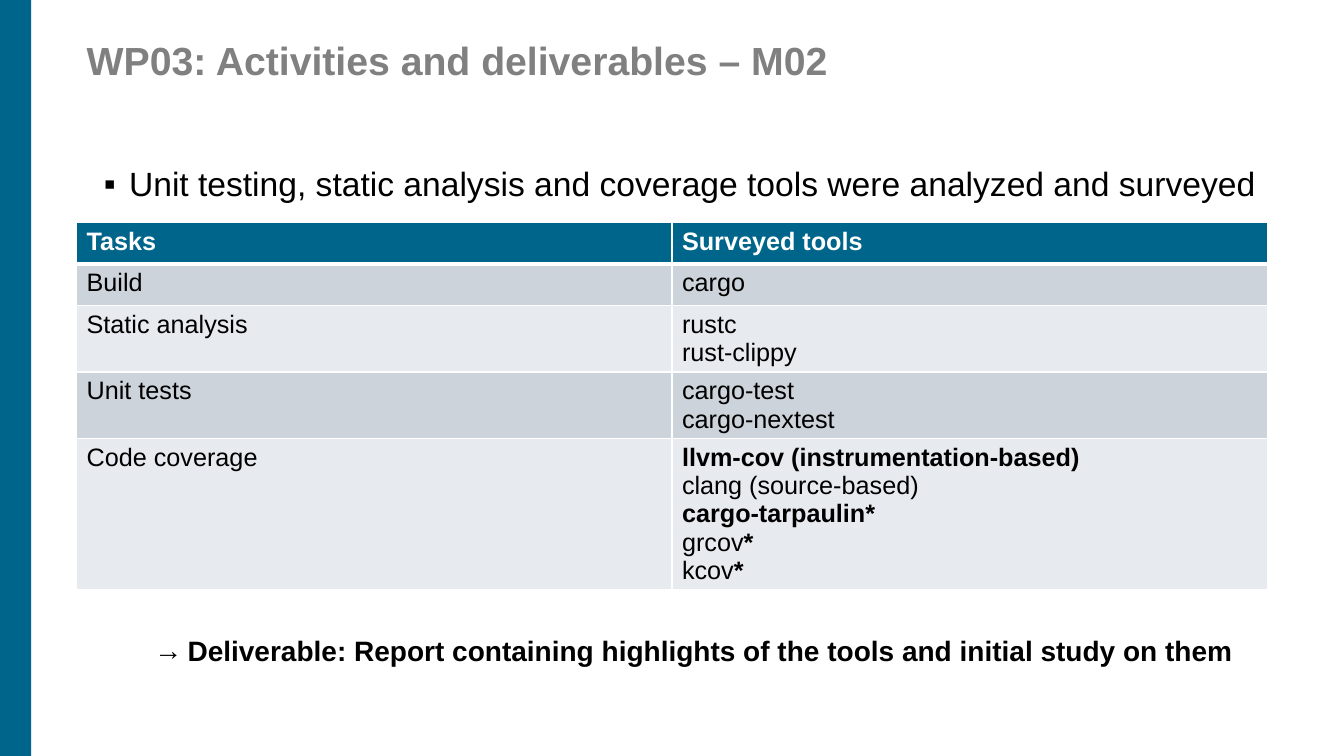
import pptx
import pptx.util
import pptx.dml.color
import pptx.enum.shapes
import pptx.enum.text
import pptx.oxml
import pptx.oxml.ns
from pptx.util import Inches

COLORS = {
    "accent": "00658B",
    "title": "808080",
    "text": "000000",
    "white": "FFFFFF",
    "odd_row": "CCD3DA",
    "even_row": "E7EAEE",
}
FONT = "Arial"
HEADINGS = ("Tasks", "Surveyed tools")
SURVEY = [
    ("Build", [[("cargo", False)]]),
    ("Static analysis", [[("rustc", False)], [("rust-clippy", False)]]),
    ("Unit tests", [[("cargo-test", False)], [("cargo-nextest", False)]]),
    ("Code coverage", [
        [("llvm-cov (instrumentation-based)", True)],
        [("clang (source-based)", False)],
        [("cargo-tarpaulin*", True)],
        [("grcov", False), ("*", True)],
        [("kcov", False), ("*", True)],
    ]),
]


def rgb(name):
    return pptx.dml.color.RGBColor.from_string(COLORS[name])


def xml(markup):
    namespace = pptx.oxml.ns.nsdecls("a")
    return pptx.oxml.parse_xml(markup.replace("/>", f" {namespace}/>", 1)
                               if markup.endswith("/>") and markup.count("<") == 1
                               else markup.replace(">", f" {namespace}>", 1))


def add_run(paragraph, text, size, color, bold=False):
    run = paragraph.add_run()
    run.text = text
    run.font.name = FONT
    run.font.size = pptx.util.Pt(size)
    run.font.bold = bold
    run.font.color.rgb = rgb(color)


def place(shape, left, top, width, height):
    shape.left, shape.top = Inches(left), Inches(top)
    shape.width, shape.height = Inches(width), Inches(height)


def prepare_text(placeholder):
    frame = placeholder.text_frame
    frame.word_wrap = True
    frame.auto_size = pptx.enum.text.MSO_AUTO_SIZE.NONE
    frame.vertical_anchor = pptx.enum.text.MSO_ANCHOR.TOP
    return frame


def add_sidebar(slide, left, top, width, height):
    sidebar = slide.shapes.add_shape(
        pptx.enum.shapes.MSO_SHAPE.RECTANGLE,
        Inches(left), Inches(top), Inches(width), Inches(height))
    sidebar.shadow.inherit = False
    sidebar.fill.solid()
    sidebar.fill.fore_color.rgb = rgb("accent")
    sidebar.line.fill.background()


def fill_title(slide, left, top, width, height):
    title = slide.shapes.title
    place(title, left, top, width, height)
    heading = prepare_text(title).paragraphs[0]
    heading.alignment = pptx.enum.text.PP_ALIGN.LEFT
    heading.line_spacing = 0.9
    add_run(heading, "WP03: Activities and deliverables – M02", 28, "title", True)


def set_bullet(paragraph, symbol, margin, hanging):
    properties = paragraph._p.get_or_add_pPr()
    properties.set("marL", str(Inches(margin)))
    properties.set("indent", str(-Inches(hanging)))
    properties.append(xml(f'<a:buFont typeface="{FONT}"/>'))
    properties.append(xml(f'<a:buChar char="{symbol}"/>'))
    paragraph.line_spacing = 0.9


def fill_body(slide, left, top, width, height):
    body = slide.placeholders[1]
    place(body, left, top, width, height)
    frame = prepare_text(body)

    finding = frame.paragraphs[0]
    set_bullet(finding, "▪", 0.25, 0.25)
    finding.space_before = pptx.util.Pt(0)
    add_run(finding, "Unit testing, static analysis and coverage tools "
            "were analyzed and surveyed", 24, "text")

    deliverable = frame.add_paragraph()
    deliverable.level = 1
    set_bullet(deliverable, "→", 0.83, 0.33)
    deliverable.space_before = Inches(4.3)
    add_run(deliverable, "Deliverable: Report containing highlights of the tools "
            "and initial study on them", 20, "text", True)


def style_cell(cell, fill, bottom_width):
    properties = cell._tc.get_or_add_tcPr()
    for side, width in (("L", 1), ("R", 1), ("T", 1), ("B", bottom_width)):
        properties.append(xml(
            f'<a:ln{side} w="{pptx.util.Pt(width)}"><a:solidFill>'
            f'<a:srgbClr val="{COLORS["white"]}"/></a:solidFill></a:ln{side}>'))
    cell.fill.solid()
    cell.fill.fore_color.rgb = rgb(fill)


def fill_cell(cell, lines, color):
    frame = cell.text_frame
    for index, line in enumerate(lines):
        paragraph = frame.add_paragraph() if index else frame.paragraphs[0]
        for text, bold in line:
            add_run(paragraph, text, 18, color, bold)


def add_survey_table(slide, left, top, width):
    rows = [[[[(heading, True)]] for heading in HEADINGS]]
    rows += [[[[(task, False)]], tools] for task, tools in SURVEY]
    heights = [max(0.41, 0.1 + 0.28 * len(tools)) for _, tools in rows]
    table = slide.shapes.add_table(
        len(rows), len(HEADINGS), Inches(left), Inches(top),
        Inches(width), Inches(sum(heights))).table
    for row_index, row in enumerate(rows):
        table.rows[row_index].height = Inches(heights[row_index])
        is_header = row_index == 0
        stripe = "odd_row" if row_index % 2 else "even_row"
        for column_index, lines in enumerate(row):
            cell = table.cell(row_index, column_index)
            style_cell(cell, "accent" if is_header else stripe, 3 if is_header else 1)
            fill_cell(cell, lines, "white" if is_header else "text")


def build_activities_slide(deck):
    slide = deck.slides.add_slide(deck.slide_layouts[1])
    add_sidebar(slide, 0, 0, 0.31, 7.5)
    fill_title(slide, 0.76, 0.36, 11, 1.08)
    fill_body(slide, 0.93, 1.61, 11.81, 5.35)
    add_survey_table(slide, 0.76, 2.21, 11.81)


def main():
    deck = pptx.Presentation()
    deck.slide_width, deck.slide_height = Inches(13.33), Inches(7.5)
    build_activities_slide(deck)
    deck.save("out.pptx")


if __name__ == "__main__":
    main()
